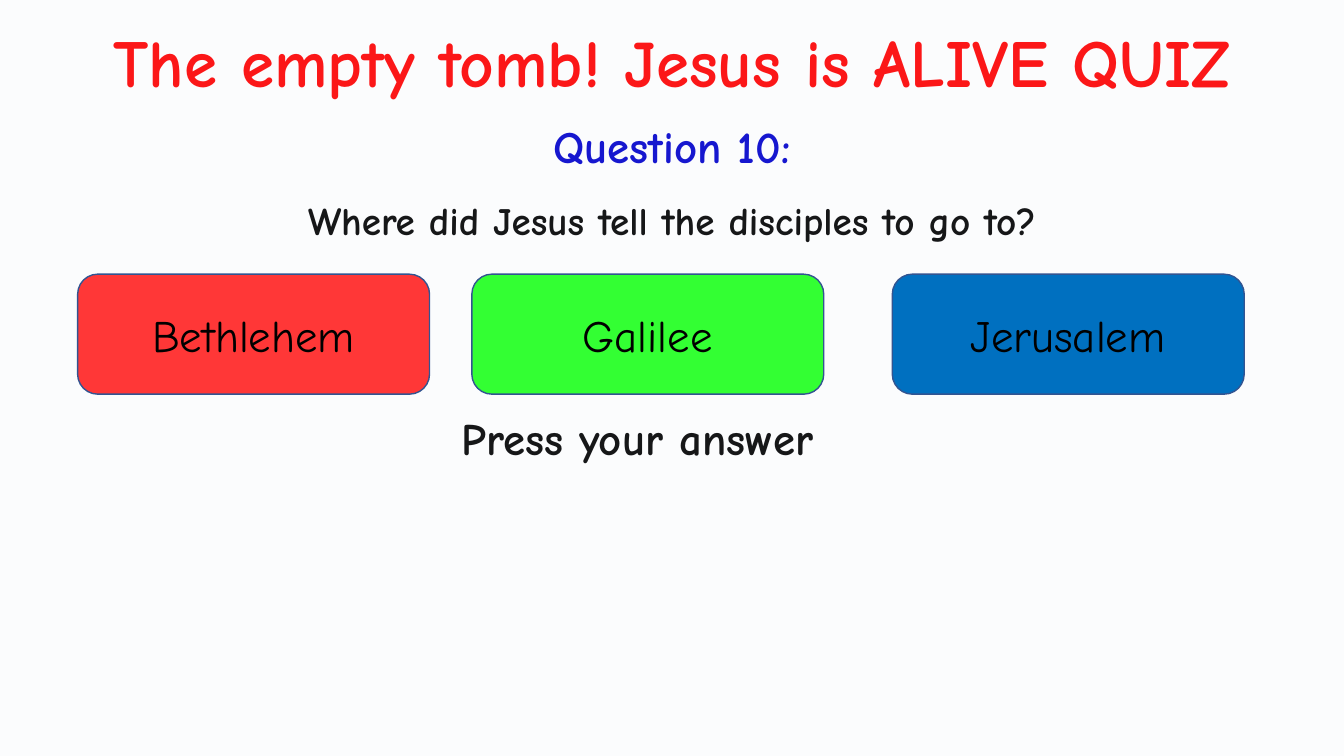
from lxml.etree import SubElement
from pptx import Presentation
from pptx.dml.color import RGBColor
from pptx.enum.shapes import MSO_SHAPE as Shape
from pptx.enum.text import MSO_ANCHOR as Anchor, MSO_AUTO_SIZE as AutoSize, PP_ALIGN as Align
from pptx.oxml.ns import qn
from pptx.util import Inches, Pt


def color(hex_value):
    return RGBColor.from_string(hex_value)


def write(shape, text, size, hex_value="000000", bold=True, align=Align.CENTER,
          anchor=Anchor.TOP, wrap=True):
    frame = shape.text_frame
    frame.auto_size = AutoSize.NONE
    frame.word_wrap = wrap
    frame.vertical_anchor = anchor
    paragraph = frame.paragraphs[0]
    paragraph.alignment = align
    run = paragraph.add_run()
    run.text = text
    run.font.name = "Comic Neue"
    run.font.size = Pt(size)
    run.font.bold = bold
    run.font.color.rgb = color(hex_value)
    return paragraph


presentation = Presentation()
presentation.slide_width = Inches(13.33)
presentation.slide_height = Inches(7.5)
slide = presentation.slides.add_slide(presentation.slide_layouts[1])
shapes = slide.shapes

# Quiz title
title = shapes.title
title.left, title.top = Inches(0), Inches(0.15)
title.width, title.height = Inches(13.33), Inches(0.91)
write(title, "The empty tomb! Jesus is ALIVE QUIZ", 48, "FF0000", wrap=False)

# Question text, without a bullet
question = slide.placeholders[1]
question.left, question.top = Inches(0.49), Inches(1.86)
question.width, question.height = Inches(12.35), Inches(0.86)
paragraph = write(question, "Where did Jesus tell the disciples to go to?", 28)
paragraph.line_spacing = Pt(36)
paragraph.space_before = Pt(10)
properties = paragraph._p.get_or_add_pPr()
properties.set("marL", "0")
properties.set("indent", "0")
SubElement(properties, qn("a:buNone"))

# Prompt and question number
prompt = shapes.add_textbox(Inches(4.48), Inches(4.09), Inches(6.73), Inches(0.72))
paragraph = write(prompt, "Press your answer", 32, align=Align.LEFT)
paragraph.line_spacing = 0.9
paragraph.space_before = Pt(7.5)

number = shapes.add_textbox(Inches(4.46), Inches(1.13), Inches(4.41), Inches(0.64))
write(number, "Question 10:", 32, "0000CC")

# Pale tint over the whole slide
tint = shapes.add_shape(Shape.RECTANGLE, 0, 0, presentation.slide_width,
                        presentation.slide_height)
tint.shadow.inherit = False
tint.fill.solid()
tint.fill.fore_color.rgb = color("DAE3F3")
tint.line.fill.background()
tint_color = tint.fill._xPr.find(qn("a:solidFill")).find(qn("a:srgbClr"))
SubElement(tint_color, qn("a:alpha"), val="10000")

# Answer buttons
answers = [
    ("Bethlehem", 0.77, "FF3737"),
    ("Galilee", 4.68, "33FF33"),
    ("Jerusalem", 8.85, "0070C0"),
]
for answer, left, fill in answers:
    button = shapes.add_shape(Shape.ROUNDED_RECTANGLE, Inches(left), Inches(2.72),
                              Inches(3.49), Inches(1.19))
    button.shadow.inherit = False
    button.fill.solid()
    button.fill.fore_color.rgb = color(fill)
    button.line.color.rgb = color("325491")
    button.line.width = Pt(1)
    write(button, answer, 32, bold=False, anchor=Anchor.MIDDLE)

presentation.save("out.pptx")
